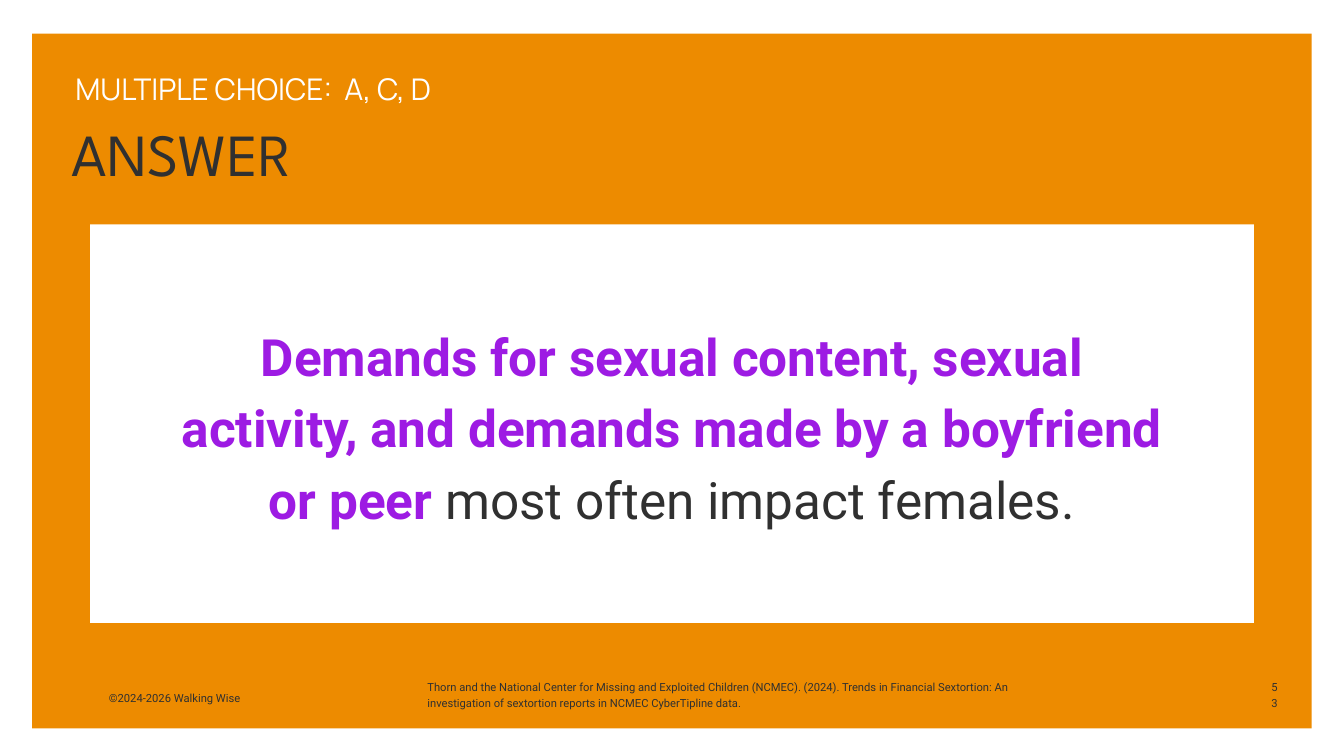
from pptx import Presentation
from pptx.dml.color import RGBColor
from pptx.enum.shapes import MSO_SHAPE
from pptx.enum.text import MSO_AUTO_SIZE, PP_ALIGN
from pptx.util import Emu, Pt

RECT = MSO_SHAPE.RECTANGLE
GROW = MSO_AUTO_SIZE.SHAPE_TO_FIT_TEXT
LEFT, CENTER = PP_ALIGN.LEFT, PP_ALIGN.CENTER

PX = 9144  # 100 px to the inch
LEADING = 1.4

THEME = {
    "orange": RGBColor(0xED, 0x8B, 0x00),
    "white": RGBColor(0xFF, 0xFF, 0xFF),
    "ink": RGBColor(0x30, 0x30, 0x30),
    "purple": RGBColor(0x9D, 0x1B, 0xE3),
    "title": {"name": "League Spartan", "size": Pt(64)},
    "kicker": {"name": "Manrope", "size": Pt(32)},
    "body": {"name": "Roboto", "size": Pt(55)},
    "small": {"name": "Roboto", "size": Pt(12)},
}


def px(*lengths):
    return [Emu(n * PX) for n in lengths]


def add_text(box, style, runs, align=LEFT):
    """Add a one-paragraph box; runs are (text, colour name, bold)."""
    tf = s.shapes.add_textbox(*px(*box)).text_frame
    frame = {"margin_left": 0, "margin_top": 0, "margin_right": 0,
             "margin_bottom": 0, "word_wrap": True, "auto_size": GROW}
    for name, value in frame.items():
        setattr(tf, name, value)
    p = tf.paragraphs[0]
    p.alignment = align
    p.line_spacing = Pt(round(THEME[style]["size"].pt * LEADING, 1))
    for text, color, bold in runs:
        r = p.add_run()
        r.text = text
        for name, value in {**THEME[style], "bold": bold}.items():
            setattr(r.font, name, value)
        r.font.color.rgb = THEME[color]


prs = Presentation()
prs.slide_width, prs.slide_height = px(2000, 1125)
s = prs.slides.add_slide(prs.slide_layouts[6])

# Orange panel with the white answer card on it
for box, color in [((48, 50, 1904, 1034), "orange"),
                   ((134, 334, 1732, 593), "white")]:
    sp = s.shapes.add_shape(RECT, *px(*box))
    sp.shadow.inherit = False
    sp.fill.solid()
    sp.fill.fore_color.rgb = THEME[color]
    sp.line.fill.background()

# Heading
add_text((107, 156, 1000, 120), "title", [("ANSWER", "ink", False)])
add_text((112, 97, 1591, 60), "kicker",
         [("MULTIPLE CHOICE:  A, C, D", "white", False)])

# Footer
add_text((1888, 1009, 17, 20), "small", [("53", "ink", False)], CENTER)
add_text((162, 1025, 258, 23), "small",
         [("©2024-2026 Walking Wise", "ink", False)])
add_text((636, 1009, 962, 46), "small", [(
    "Thorn and the National Center for Missing and Exploited Children "
    "(NCMEC). (2024). Trends in Financial Sextortion: An investigation of "
    "sextortion reports in NCMEC CyberTipline data.", "ink", False)])

# Answer
add_text((248, 468, 1504, 315), "body", [
    ("Demands for sexual content, sexual activity, and demands made by a "
     "boyfriend or peer ", "purple", True),
    ("most often impact females.", "ink", False)], CENTER)

prs.save("out.pptx")
